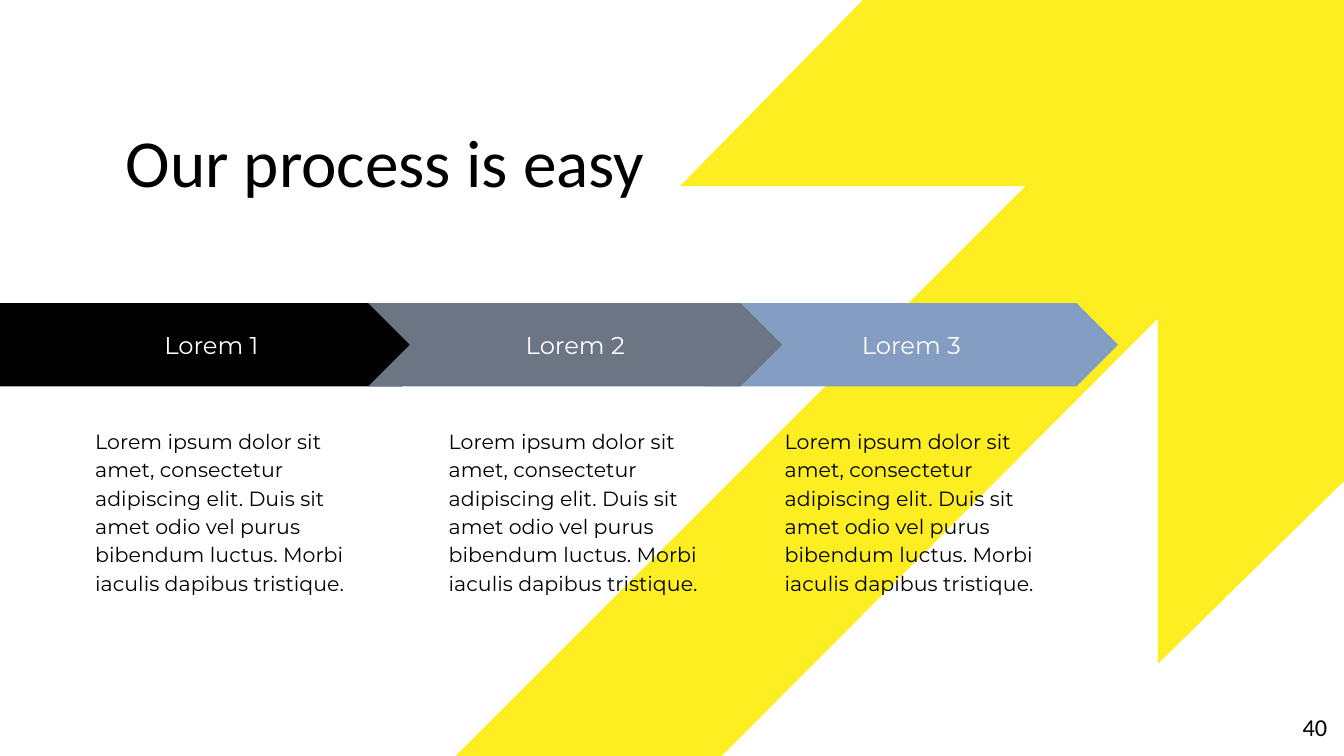
from pptx import Presentation
from pptx.dml.color import RGBColor
from pptx.enum.shapes import MSO_SHAPE
from pptx.enum.text import MSO_ANCHOR, PP_ALIGN
from pptx.util import Pt

EMU_PER_PX = 4572
PAGE_WIDTH, PAGE_HEIGHT = 2000, 1125
WHITE = RGBColor(0xFF, 0xFF, 0xFF)
BLACK = RGBColor(0x00, 0x00, 0x00)
YELLOW = RGBColor(0xFC, 0xEE, 0x21)
SLATE = RGBColor(0x6C, 0x75, 0x83)
BLUE = RGBColor(0x83, 0x9D, 0xC3)

ARROW_POINTS = [
    (1284, 0), (1012, 277), (1526, 277), (678, 1125), (1074, 1125),
    (1723, 474), (1723, 988), (2000, 716), (2000, 0),
]
BODY = (
    "Lorem ipsum dolor sit amet, consectetur adipiscing elit. Duis sit amet "
    "odio vel purus bibendum luctus. Morbi iaculis dapibus tristique."
)
STEPS = [
    ("Lorem 3", MSO_SHAPE.CHEVRON, 1048, 616, BLUE, 1148),
    ("Lorem 1", MSO_SHAPE.PENTAGON, 0, 660, BLACK, 122),
    ("Lorem 2", MSO_SHAPE.CHEVRON, 548, 616, SLATE, 648),
]

TITLE = {
    "font": {"name": "Calibri", "size": Pt(36)},
    "para": {"line_spacing": 0.9},
    "frame": {"vertical_anchor": MSO_ANCHOR.BOTTOM},
}
NUMBER = {
    "font": {"name": "Calibri", "size": Pt(13)},
    "para": {"alignment": PP_ALIGN.RIGHT},
    "frame": {"vertical_anchor": MSO_ANCHOR.MIDDLE},
}
LABEL = {
    "font": {"name": "Montserrat", "size": Pt(13)},
    "para": {"alignment": PP_ALIGN.CENTER},
    "frame": {"vertical_anchor": MSO_ANCHOR.MIDDLE},
}
DETAIL = {
    "font": {"name": "Montserrat", "size": Pt(11)},
    "para": {"line_spacing": 1.15},
    "frame": {"vertical_anchor": MSO_ANCHOR.TOP},
}


def emu(*lengths):
    """Turn lengths in px into EMU."""
    return [length * EMU_PER_PX for length in lengths]


def apply_format(target, values):
    """Set each named attribute on the target."""
    for name, value in values.items():
        setattr(target, name, value)


def paint(shape, color):
    """Give a shape a plain fill without line or shadow."""
    shape.shadow.inherit = False
    shape.fill.solid()
    shape.fill.fore_color.rgb = color
    shape.line.fill.background()


def write_text(shape, text, style, color=BLACK, inset=0):
    """Fill a shape with one styled paragraph."""
    frame = shape.text_frame
    frame.word_wrap = True
    margins = ("margin_left", "margin_top", "margin_right", "margin_bottom")
    apply_format(frame, dict.fromkeys(margins, inset * EMU_PER_PX))
    apply_format(frame, style["frame"])
    para = frame.paragraphs[0]
    apply_format(para, style["para"])
    span = para.add_run()
    span.text = text
    apply_format(span.font, style["font"])
    span.font.color.rgb = color


def add_text(shapes, bounds, text, style, inset=0):
    """Add a text box."""
    write_text(shapes.add_textbox(*emu(*bounds)), text, style, inset=inset)


def add_background_arrow(shapes):
    """Draw the large yellow arrow."""
    start, *corners = ARROW_POINTS
    builder = shapes.build_freeform(*start, scale=EMU_PER_PX)
    builder.add_line_segments(corners, close=True)
    paint(builder.convert_to_shape(), YELLOW)


def add_step(shapes, label, kind, left, width, color, text_left):
    """Add a group of one process arrow and its description."""
    members = shapes.add_group_shape().shapes
    arrow = members.add_shape(kind, *emu(left, 451, width, 124))
    arrow.adjustments[0] = 0.5
    paint(arrow, color)
    write_text(arrow, label, LABEL, WHITE, inset=20)
    add_text(members, (text_left, 613, 416, 316), BODY, DETAIL, inset=20)


def main():
    """Build and save the process slide."""
    deck = Presentation()
    deck.slide_width, deck.slide_height = emu(PAGE_WIDTH, PAGE_HEIGHT)
    page = deck.slides.add_slide(deck.slide_layouts[6])
    page.background.fill.solid()
    page.background.fill.fore_color.rgb = WHITE
    add_background_arrow(page.shapes)
    add_text(page.shapes, (187, 190, 1338, 110), "Our process is easy", TITLE)
    add_text(page.shapes, (1855, 1039, 120, 86), "40", NUMBER)
    for step in STEPS:
        add_step(page.shapes, *step)
    deck.save("out.pptx")


if __name__ == "__main__":
    main()
